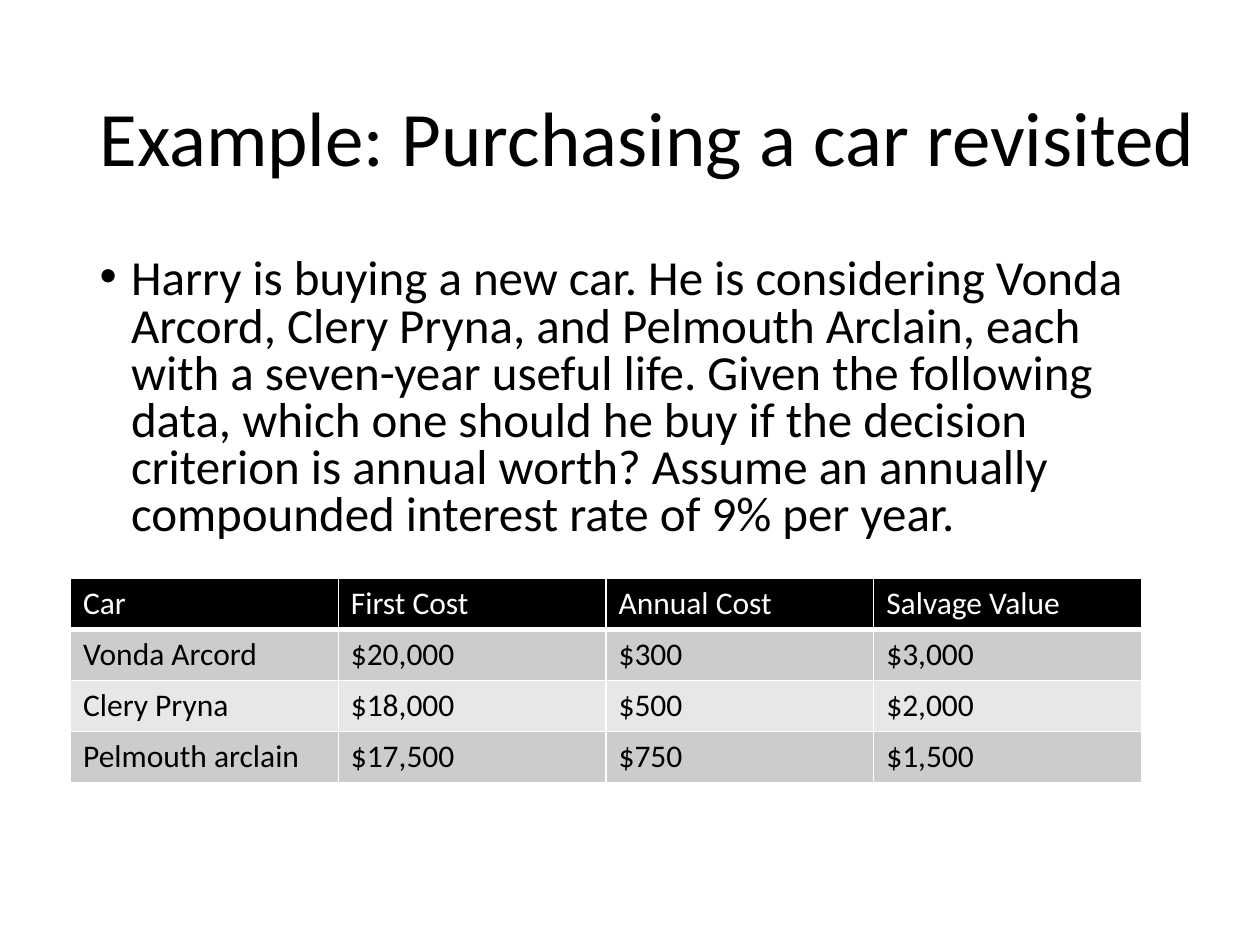
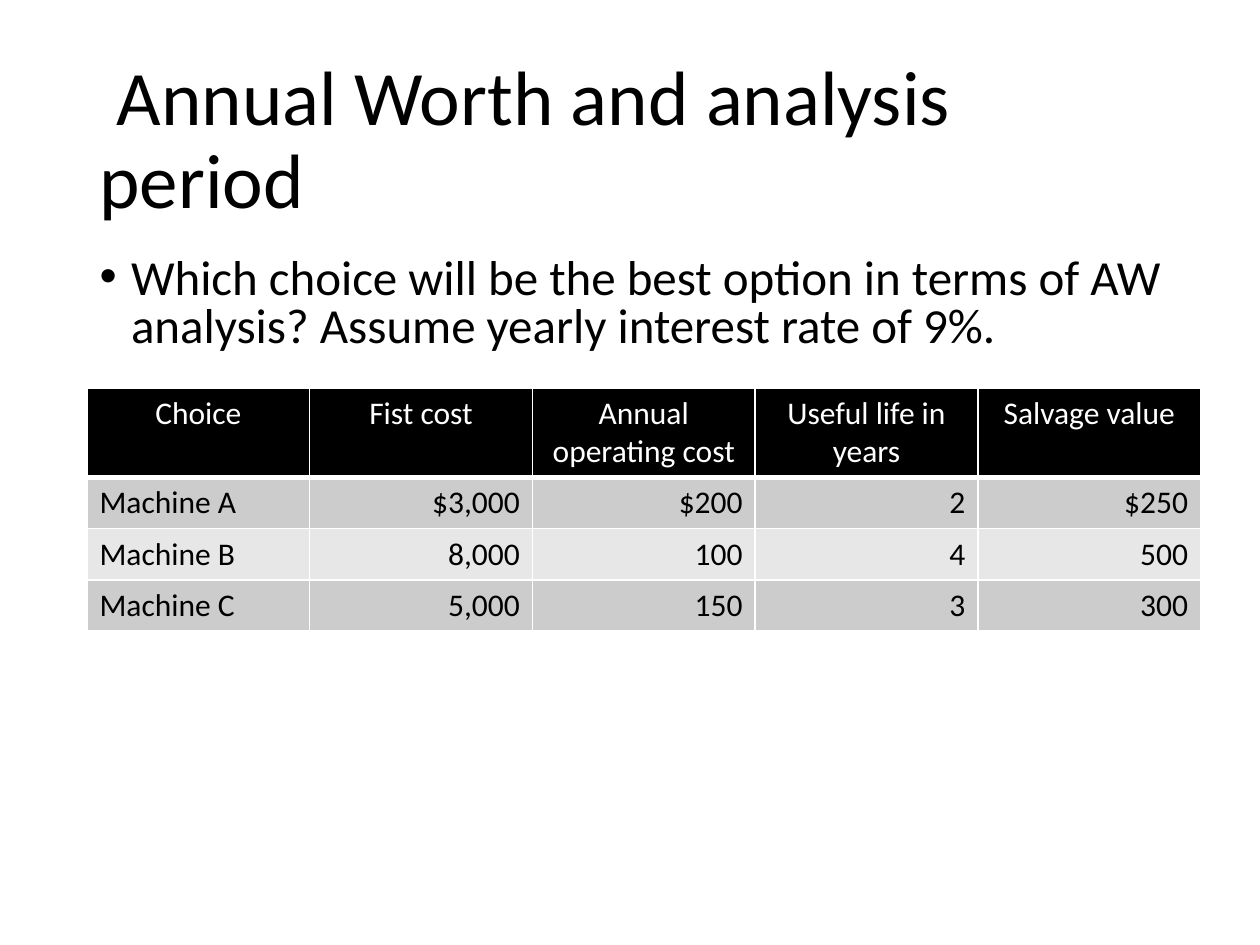
from lxml import etree
from pptx import Presentation
from pptx.dml.color import RGBColor
from pptx.enum import text
from pptx.oxml import ns
from pptx.util import Inches, Pt

# Shared style
BLACK = RGBColor(0x00, 0x00, 0x00)
WHITE = RGBColor(0xFF, 0xFF, 0xFF)
BAND_DARK = RGBColor(0xCC, 0xCC, 0xCC)
BAND_LIGHT = RGBColor(0xE7, 0xE7, 0xE7)
FONT = "Calibri"
LEFT, CENTER, RIGHT = (text.PP_ALIGN.LEFT, text.PP_ALIGN.CENTER,
                       text.PP_ALIGN.RIGHT)
TEXT_LEFT, TEXT_WIDTH = 0.69, 8.62
ROW_HEIGHT = 0.405


def write(frame, words, size=18, color=BLACK, align=LEFT, line_spacing=None,
          space_before=0):
    """Put one formatted paragraph into a text frame and return it."""
    para = frame.paragraphs[0]
    para.alignment = align
    para.space_before = Pt(space_before)
    if line_spacing:
        para.line_spacing = line_spacing
    span = para.add_run()
    span.text = words
    span.font.name = FONT
    span.font.size = Pt(size)
    span.font.bold = False
    span.font.color.rgb = color
    return para


def add_bullet(para, indent=0.25):
    properties = para._p.get_or_add_pPr()
    properties.set("marL", str(Inches(indent)))
    properties.set("indent", str(-Inches(indent)))
    font = etree.SubElement(properties, ns.qn("a:buFont"))
    font.set("typeface", "Arial")
    etree.SubElement(properties, ns.qn("a:buChar")).set("char", "•")


def add_borders(cell, **widths):
    """Draw white cell borders; the keywords L, R, T, B are points."""
    properties = cell._tc.get_or_add_tcPr()
    for side, width in widths.items():
        line = etree.SubElement(properties, ns.qn(f"a:ln{side}"))
        line.set("w", str(Pt(width)))
        fill = etree.SubElement(line, ns.qn("a:solidFill"))
        etree.SubElement(fill, ns.qn("a:srgbClr")).set("val", str(WHITE))


class Lesson:
    """Holds the deck and the page that is being filled."""

    def __init__(self):
        self.deck = Presentation()
        self.deck.slide_width = Inches(10)
        self.deck.slide_height = Inches(7.5)
        self.page = None

    def new_page(self):
        self.page = self.deck.slides.add_slide(self.deck.slide_layouts[1])

    def place(self, box, top, width, height):
        box.left, box.top = Inches(TEXT_LEFT), Inches(top)
        box.width, box.height = Inches(width), Inches(height)
        box.text_frame.word_wrap = True
        box.text_frame.auto_size = text.MSO_AUTO_SIZE.NONE
        return box.text_frame

    def title(self, words, width=TEXT_WIDTH):
        frame = self.place(self.page.shapes.title, 0.4, width, 1.45)
        frame.vertical_anchor = text.MSO_ANCHOR.MIDDLE
        write(frame, words, size=44, line_spacing=0.9)

    def question(self, words, height):
        frame = self.place(self.page.placeholders[1], 2, TEXT_WIDTH, height)
        add_bullet(write(frame, words, size=28, line_spacing=0.8,
                         space_before=10))

    def table(self, rows, left, top, width, header_height=ROW_HEIGHT,
              header_align=LEFT, value_align=LEFT):
        row_count, column_count = len(rows), len(rows[0])
        height = header_height + ROW_HEIGHT * (row_count - 1)
        grid = self.page.shapes.add_table(
            row_count, column_count, Inches(left), Inches(top),
            Inches(width), Inches(height)).table
        for row_index, values in enumerate(rows):
            header = row_index == 0
            grid.rows[row_index].height = Inches(
                header_height if header else ROW_HEIGHT)
            band = BAND_DARK if row_index % 2 else BAND_LIGHT
            for column_index, value in enumerate(values):
                cell = grid.cell(row_index, column_index)
                add_borders(cell, L=1, R=1, T=1, B=3 if header else 1)
                cell.fill.solid()
                cell.fill.fore_color.rgb = BLACK if header else band
                body_align = value_align if column_index else LEFT
                write(cell.text_frame, value,
                      color=WHITE if header else BLACK,
                      align=header_align if header else body_align)


def main():
    lesson = Lesson()

    # Car purchase
    lesson.new_page()
    lesson.title("Example: Purchasing a car revisited", width=9.17)
    lesson.question(
        "Harry is buying a new car. He is considering Vonda Arcord, "
        "Clery Pryna, and Pelmouth Arclain, each with a seven-year useful "
        "life. Given the following data, which one should he buy if the "
        "decision criterion is annual worth? Assume an annually compounded "
        "interest rate of 9% per year.", height=2.49)
    lesson.table([
        ("Car", "First Cost", "Annual Cost", "Salvage Value"),
        ("Vonda Arcord", "$20,000", "$300", "$3,000"),
        ("Clery Pryna", "$18,000", "$500", "$2,000"),
        ("Pelmouth arclain", "$17,500", "$750", "$1,500"),
    ], left=0.56, top=4.59, width=8.5)

    # Machine choice
    lesson.new_page()
    lesson.title(" Annual Worth and analysis period")
    lesson.question(
        "Which choice will be the best option in terms of AW analysis? "
        "Assume yearly interest rate of 9%.", height=0.93)
    lesson.table([
        ("Choice", "Fist cost", "Annual operating cost",
         "Useful life in years", "Salvage value"),
        ("Machine A", "$3,000", "$200", "2", "$250"),
        ("Machine B", "8,000", "100", "4", "500"),
        ("Machine C", "5,000", "150", "3", "300"),
    ], left=0.69, top=3.08, width=8.84, header_height=0.7,
        header_align=CENTER, value_align=RIGHT)

    lesson.deck.save("out.pptx")


if __name__ == "__main__":
    main()
